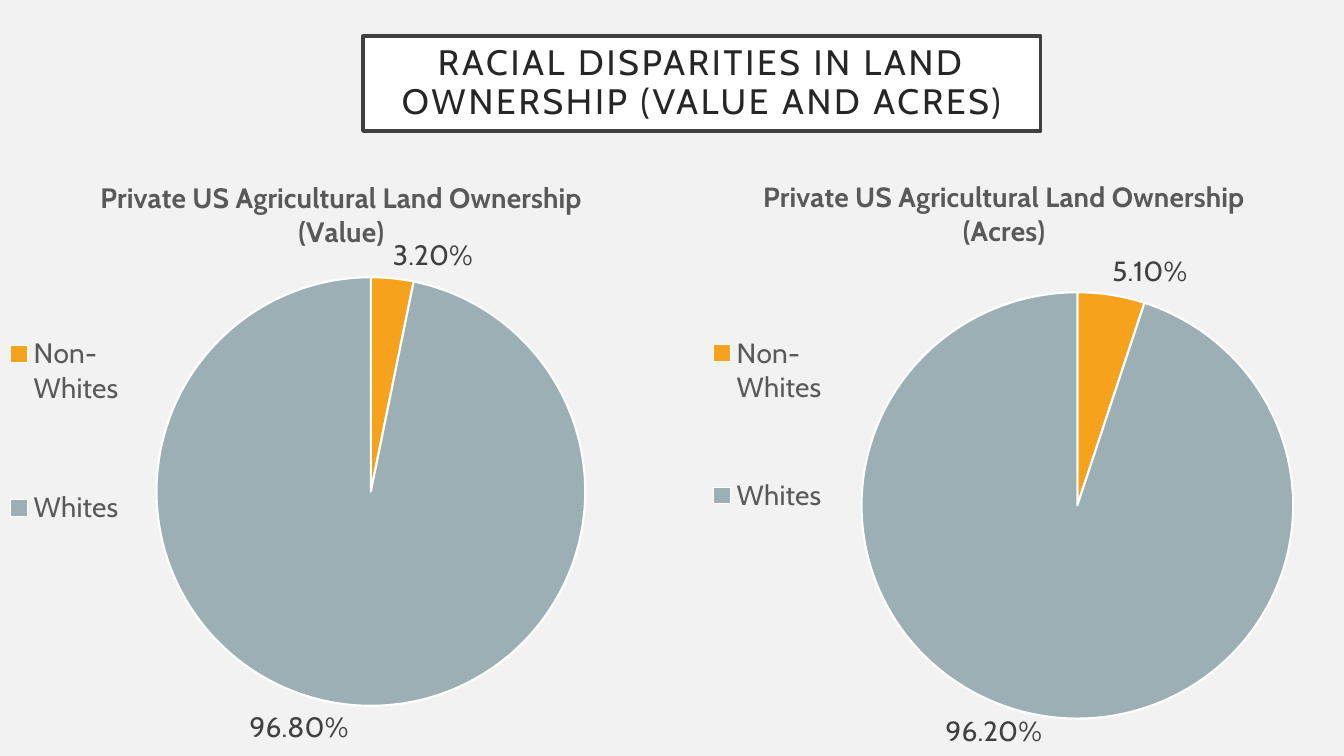
import dataclasses

import lxml.etree
import pptx
import pptx.chart.data
import pptx.dml.color
import pptx.enum.chart
import pptx.enum.shapes
import pptx.enum.text
import pptx.oxml.ns
import pptx.util

Inches = pptx.util.Inches
Box = tuple[float, float, float, float]


@dataclasses.dataclass(frozen=True)
class Theme:
    font: str = "Cabin"
    background: str = "F2F2F2"
    white: str = "FFFFFF"
    frame: str = "404040"
    heading: str = "262626"
    muted: str = "595959"
    slices: tuple[str, str] = ("F6A21D", "9BAFB5")
    heading_size: float = 25.2
    chart_size: float = 20


@dataclasses.dataclass(frozen=True)
class Pie:
    title: str
    series: str
    values: tuple[float, float]
    box: Box
    plot: Box
    legend: Box
    title_at: tuple[float, float]


THEME = Theme()
CATEGORIES = ("Non-Whites", "Whites")
PIES = (
    Pie(
        "Private US Agricultural Land Ownership (Value)",
        "Series 1",
        (0.032, 0.968),
        (0, 1.47, 6.75, 6.03),
        (0.23, 0.21, 0.63, 0.71),
        (0, 0.17, 0.19, 0.59),
        (0.14, 0.04),
    ),
    Pie(
        "Private US Agricultural Land Ownership (Acres)",
        "Private US Agricultural Land Ownership (Acres)",
        (0.051, 0.962),
        (6.75, 1.47, 6.4, 6.03),
        (0.28, 0.24, 0.67, 0.71),
        (0.03, 0.19, 0.21, 0.54),
        (0.12, 0.04),
    ),
)


def rgb(color: str) -> pptx.dml.color.RGBColor:
    return pptx.dml.color.RGBColor.from_string(color)


def set_all(target, values: dict) -> None:
    for name, value in values.items():
        setattr(target, name, value)


def style_font(font, size: float, color: str, bold: bool = False) -> None:
    set_all(font, {"name": THEME.font, "size": pptx.util.Pt(size), "bold": bold})
    font.color.rgb = rgb(color)


def paint(part, fill: str, line: str, width: float) -> None:
    part.fill.solid()
    part.fill.fore_color.rgb = rgb(fill)
    part.line.color.rgb = rgb(line)
    part.line.width = pptx.util.Pt(width)


def place(parent, index: int, values: tuple[float, ...], inner: bool = False) -> None:
    qn = pptx.oxml.ns.qn
    for old in parent.findall(qn("c:layout")):
        parent.remove(old)
    layout = lxml.etree.Element(qn("c:layout"))
    manual = lxml.etree.SubElement(layout, qn("c:manualLayout"))
    settings = [("layoutTarget", "inner")] if inner else []
    settings += [("xMode", "edge"), ("yMode", "edge")]
    settings += zip("xywh", values)
    for name, value in settings:
        lxml.etree.SubElement(manual, qn(f"c:{name}")).set("val", str(value))
    parent.insert(index, layout)


def add_heading(slide, text: str) -> None:
    s = slide.shapes.add_shape(
        pptx.enum.shapes.MSO_SHAPE.RECTANGLE,
        *map(Inches, (3.6, 0.36, 6.72, 0.94)),
    )
    s.shadow.inherit = False
    paint(s, THEME.white, THEME.frame, 2.5)
    tf = s.text_frame
    sides = ("left", "top", "right", "bottom")
    set_all(tf, {f"margin_{side}": Inches(0.2) for side in sides})
    set_all(tf, {
        "word_wrap": True,
        "vertical_anchor": pptx.enum.text.MSO_ANCHOR.MIDDLE,
    })
    p = tf.paragraphs[0]
    set_all(p, {"alignment": pptx.enum.text.PP_ALIGN.CENTER, "line_spacing": 0.9})
    r = p.add_run()
    r.text = text
    style_font(r.font, THEME.heading_size, THEME.heading)
    r.font._element.set("spc", "200")


def add_pie(slide, pie: Pie) -> None:
    data = pptx.chart.data.CategoryChartData(number_format="0.00%")
    data.categories = CATEGORIES
    data.add_series(pie.series, pie.values)
    chart = slide.shapes.add_chart(
        pptx.enum.chart.XL_CHART_TYPE.PIE, *map(Inches, pie.box), data
    ).chart
    style_font(chart.font, THEME.chart_size, THEME.muted)

    p = chart.chart_title.text_frame.paragraphs[0]
    r = p.add_run()
    r.text = pie.title
    style_font(r.font, THEME.chart_size, THEME.muted, bold=True)
    chart.chart_title.include_in_layout = False
    place(chart.chart_title._element, 1, pie.title_at)

    chart.has_legend = True
    set_all(chart.legend, {
        "position": pptx.enum.chart.XL_LEGEND_POSITION.BOTTOM,
        "include_in_layout": False,
    })
    style_font(chart.legend.font, THEME.chart_size, THEME.muted)
    place(chart.legend._element, 1, pie.legend)

    plot = chart.plots[0]
    plot.vary_by_categories = True
    place(plot._element.getparent(), 0, pie.plot, inner=True)
    series = plot.series[0]
    for i, color in enumerate(THEME.slices):
        paint(series.points[i].format, color, THEME.white, 1.5)
    labels = series.data_labels
    set_all(labels, {
        "show_value": True,
        "show_percentage": False,
        "number_format": "0.00%",
        "number_format_is_linked": False,
        "position": pptx.enum.chart.XL_LABEL_POSITION.OUTSIDE_END,
    })
    style_font(labels.font, THEME.chart_size, THEME.frame)


def main() -> None:
    prs = pptx.Presentation()
    set_all(prs, {"slide_width": Inches(13.33), "slide_height": Inches(7.5)})
    slide = prs.slides.add_slide(prs.slide_layouts[6])
    slide.background.fill.solid()
    slide.background.fill.fore_color.rgb = rgb(THEME.background)
    add_heading(slide, "RACIAL DISPARITIES IN LAND OWNERSHIP (VALUE AND ACRES)")
    for pie in PIES:
        add_pie(slide, pie)
    prs.save("out.pptx")


if __name__ == "__main__":
    main()
